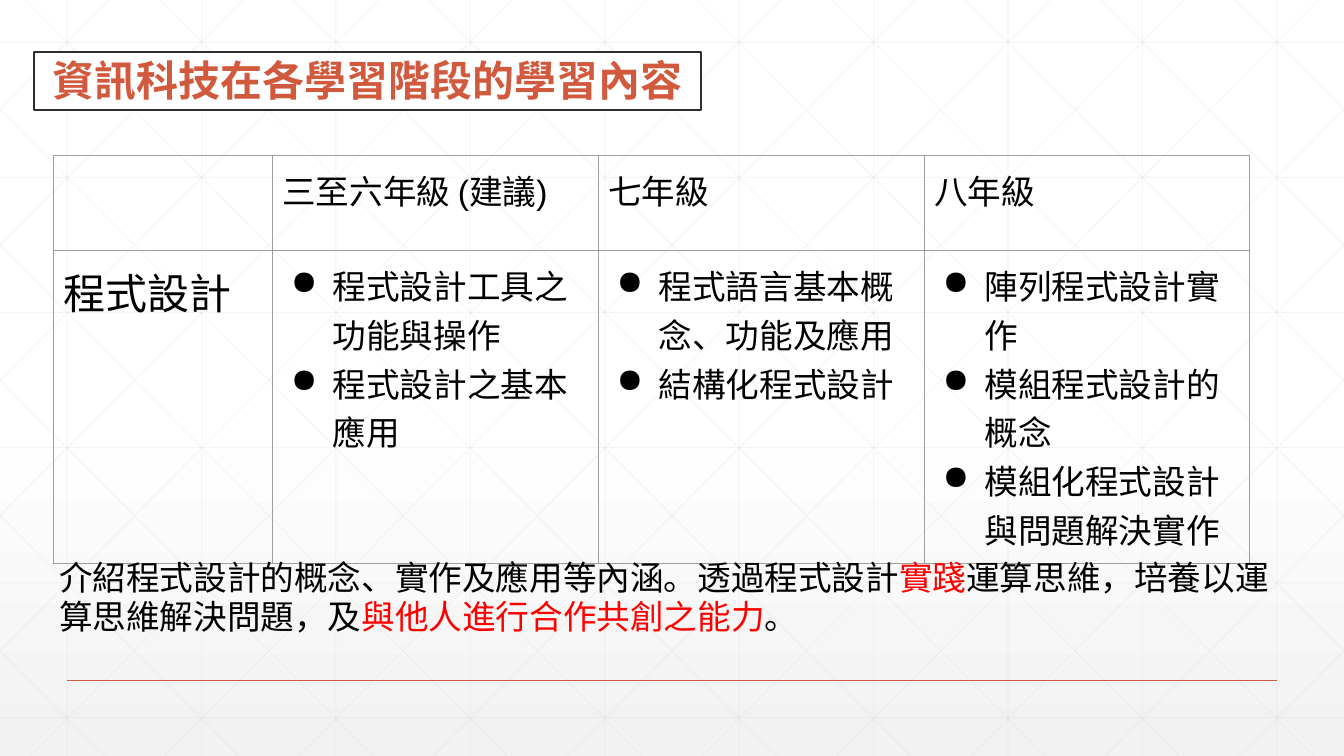
from copy import deepcopy

from lxml.etree import SubElement
from pptx import Presentation
from pptx.dml.color import RGBColor
from pptx.enum.shapes import MSO_CONNECTOR as Connector
from pptx.enum.text import MSO_ANCHOR as Anchor, PP_ALIGN as Align
from pptx.oxml.ns import qn
from pptx.util import Pt

WIDTH, HEIGHT = 960, 540
GRID_STEP = 96
DIAGONAL_RUN = 536.6
COLORS = {"paper": "FFFFFF", "shade": "F2F2F2", "grid": "D8D8D8", "accent": "D15A3E",
          "frame": "2D2E2D", "border": "9E9E9E", "ink": "000000", "key": "FF0000"}

TITLE = "資訊科技在各學習階段的學習內容"
GRADES = ["", "三至六年級 (建議)", "七年級", "八年級"]
TOPIC = "程式設計"
CONTENTS = [
    ["程式設計工具之功能與操作", "程式設計之基本應用"],
    ["程式語言基本概念、功能及應用", "結構化程式設計"],
    ["陣列程式設計實作", "模組程式設計的 概念", "模組化程式設計與問題解決實作"],
]
SUMMARY = [
    ("介紹程式設計的概念、實作及應用等內涵。透過程式設計", "ink"),
    ("實踐", "key"),
    ("運算思維，培養以運算思維解決問題，及", "ink"),
    ("與他人進行合作共創之能力", "key"),
    ("。", "ink"),
]


class SlideBuilder:
    """Holds the style and the current slide, and adds its elements."""

    def __init__(self, slide, font="Arial", size=24):
        self.slide, self.font, self.size = slide, font, size

    def color(self, name):
        return RGBColor.from_string(COLORS[name])

    def style(self, font, size=None, color="ink", bold=False):
        font.name, font.size, font.bold = self.font, Pt(size or self.size), bold
        font.color.rgb = self.color(color)

    def inset(self, holder, x, y):
        holder.margin_left = holder.margin_right = Pt(x)
        holder.margin_top = holder.margin_bottom = Pt(y)

    def background(self, stops):
        fill = self.slide.background.fill
        fill.gradient()
        fill.gradient_angle = 270
        stop_list = self.slide.element.find(".//" + qn("a:gsLst"))
        stop_list.append(deepcopy(stop_list[-1]))
        for stop, (position, name) in zip(fill.gradient_stops, stops):
            stop.position, stop.color.rgb = position, self.color(name)

    def line(self, x1, y1, x2, y2, color="grid", width=0.75, alpha=None):
        line = self.slide.shapes.add_connector(
            Connector.STRAIGHT, Pt(x1), Pt(y1), Pt(x2), Pt(y2))
        line.line.color.rgb, line.line.width = self.color(color), Pt(width)
        properties = line.element.spPr
        SubElement(properties, qn("a:effectLst"))
        if alpha:
            tone = properties.find(".//" + qn("a:srgbClr"))
            SubElement(tone, qn("a:alpha"), val=str(alpha * 1000))

    def grid(self):
        for column in range(10):
            x = 48 + GRID_STEP * column
            self.line(x, 0, x, HEIGHT, alpha=24)
        for row in range(6):
            y = 30.24 + 96.48 * row
            self.line(0, y, WIDTH, y, alpha=24)
        for diagonal in range(-5, 10):
            start = 18 + GRID_STEP * diagonal
            left, right = max(start, 0), min(start + DIAGONAL_RUN, WIDTH)
            top, bottom = [(x - start) * HEIGHT / DIAGONAL_RUN for x in (left, right)]
            self.line(left, top, right, bottom, alpha=24)
            self.line(WIDTH - left, top, WIDTH - right, bottom, alpha=24)

    def title(self, text, x, y, width, height):
        title = self.slide.shapes.title
        title.element.getparent().append(title.element)
        title.left, title.top, title.width, title.height = map(Pt, (x, y, width, height))
        title.fill.solid()
        title.fill.fore_color.rgb = self.color("paper")
        title.line.color.rgb, title.line.width = self.color("frame"), Pt(1.5)
        frame = title.text_frame
        frame.text, frame.vertical_anchor = text, Anchor.BOTTOM
        self.inset(frame, 5, 3)
        heading = frame.paragraphs[0]
        heading.alignment, heading.line_spacing = Align.CENTER, 0.9
        self.style(heading.font, 30, "accent", True)

    def cell(self, cell, lines, size=None, bulleted=False):
        cell.fill.background()
        self.inset(cell, 7.2, 7.2)
        cell.text = "\n".join(lines)
        for paragraph in cell.text_frame.paragraphs:
            if bulleted:
                properties = paragraph._p.get_or_add_pPr()
                properties.set("marL", str(Pt(36)))
                properties.set("indent", str(Pt(-30)))
                SubElement(properties, qn("a:buChar"), char="●")
            self.style(paragraph.font, size)
        cell_properties = cell._tc.get_or_add_tcPr()
        for index, side in enumerate(("lnL", "lnR", "lnT", "lnB")):
            border = cell_properties.makeelement(qn("a:" + side), {"w": str(Pt(0.75))})
            fill = SubElement(border, qn("a:solidFill"))
            SubElement(fill, qn("a:srgbClr"), val=COLORS["border"])
            cell_properties.insert(index, border)

    def table(self, x, y, widths, heights):
        table = self.slide.shapes.add_table(
            len(heights), len(widths), Pt(x), Pt(y), Pt(sum(widths)), Pt(sum(heights))).table
        table.first_row = table.horz_banding = False
        for column, width in zip(table.columns, widths):
            column.width = Pt(width)
        for row, height in zip(table.rows, heights):
            row.height = Pt(height)
        return table

    def text(self, runs, x, y, width, height):
        box = self.slide.shapes.add_textbox(Pt(x), Pt(y), Pt(width), Pt(height))
        frame = box.text_frame
        frame.word_wrap = True
        self.inset(frame, 7.2, 7.2)
        paragraph = frame.paragraphs[0]
        paragraph.line_spacing = 0.95
        for words, color in runs:
            run = paragraph.add_run()
            run.text = words
            self.style(run.font, color=color)


def main():
    deck = Presentation()
    deck.slide_width, deck.slide_height = Pt(WIDTH), Pt(HEIGHT)
    builder = SlideBuilder(deck.slides.add_slide(deck.slide_layouts[5]))
    builder.background([(0, "paper"), (0.53, "paper"), (1, "shade")])
    builder.grid()
    builder.line(48, 486, 912, 486, "accent", 1)

    stages = builder.table(38, 111, [156.5] + [232.8] * 3, [68, 223])
    for column, grade in enumerate(GRADES):
        builder.cell(stages.cell(0, column), [grade])
    builder.cell(stages.cell(1, 0), [TOPIC], 30)
    for column, topics in enumerate(CONTENTS, 1):
        builder.cell(stages.cell(1, column), topics, bulleted=True)

    builder.title(TITLE, 24.5, 37.2, 476, 41.2)
    builder.text(SUMMARY, 35.2, 393, 888.5, 64)
    deck.save("out.pptx")


if __name__ == "__main__":
    main()
